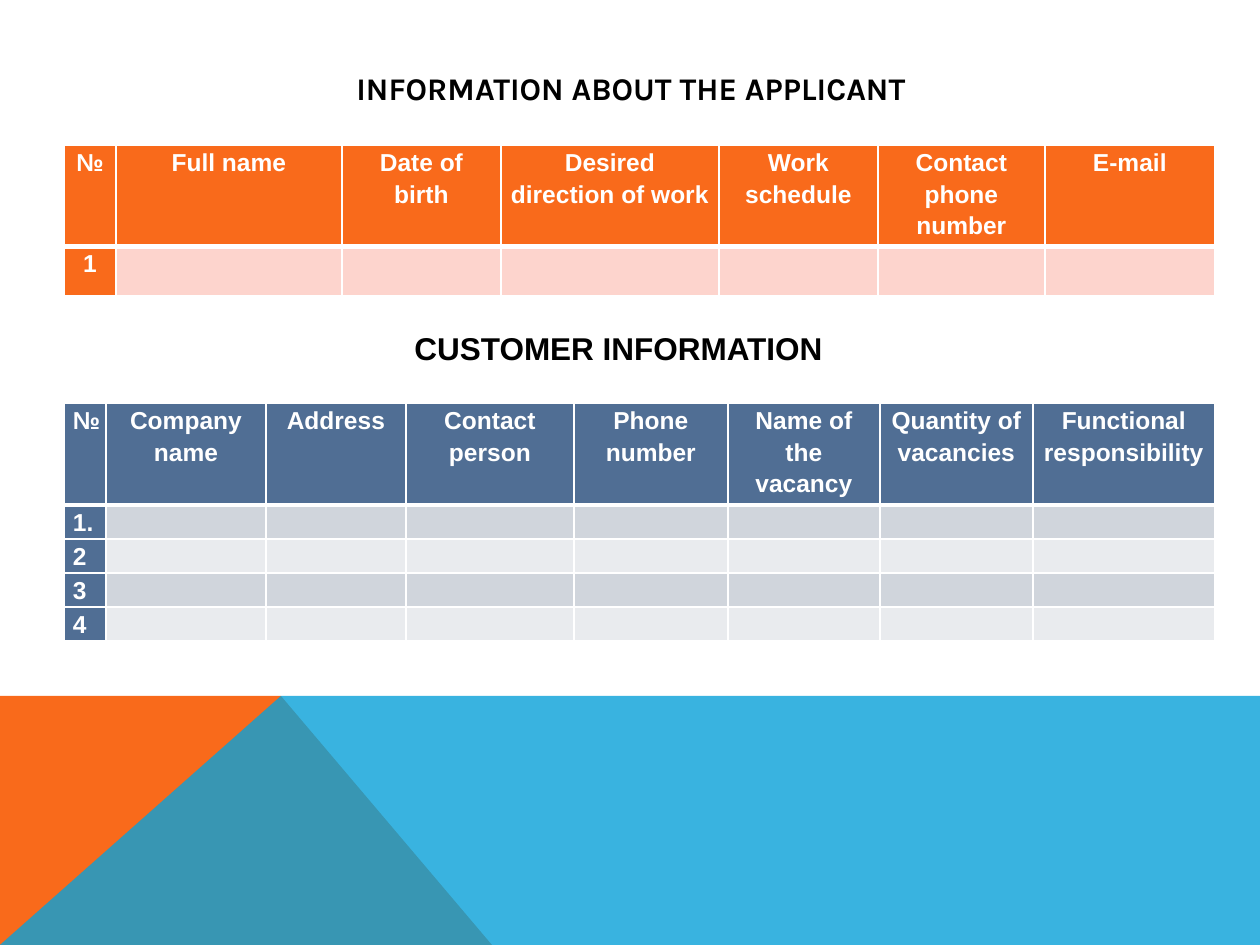
from lxml import etree
from pptx import Presentation, util as u
from pptx.dml.color import RGBColor
from pptx.enum import text as t
from pptx.oxml.ns import qn

PX = u.Inches(1) / 126
THEME = {
    "orange": "F96A1B", "sky": "08A1D9", "navy": "506E94",
    "blush": "FDD4CD", "grey": "D0D5DC", "pale": "E9EBEE",
    "ink": "000000", "white": "FFFFFF",
    "heading_size": 18, "table_size": 14,
}


def px(length):
    return u.Emu(round(length * PX))


def write(frame, content, size, color, font="Arial", align=t.PP_ALIGN.LEFT, spacing=None):
    paragraph = frame.paragraphs[0]
    paragraph.alignment = align
    paragraph.line_spacing = spacing
    if not content:
        # An empty cell still takes its row height from this size
        etree.SubElement(paragraph._p, qn("a:endParaRPr"), sz=str(size * 100))
        return
    run = paragraph.add_run()
    run.text = content
    run.font.name, run.font.size, run.font.bold = font, u.Pt(size), True
    run.font.color.rgb = RGBColor.from_string(THEME[color])


prs = Presentation()
prs.slide_width, prs.slide_height = px(1260), px(945)
slide = prs.slides.add_slide(prs.slide_layouts[5])

# Bottom decoration: an orange wedge under a translucent blue band
wedge = [(0, 945), (0, 696), (281, 696), (492, 945)]
band = [(0, 945), (281, 696), (1260, 696), (1260, 945)]
for points, color, alpha in [(wedge, "orange", 100), (band, "sky", 80)]:
    builder = slide.shapes.build_freeform(*points[0], scale=PX)
    builder.add_line_segments(points[1:], close=True)
    area = builder.convert_to_shape()
    area.shadow.inherit = False
    area.line.fill.background()
    area.fill.solid()
    area.fill.fore_color.rgb = RGBColor.from_string(THEME[color])
    rgb = area._element.spPr.find(qn("a:solidFill")).find(qn("a:srgbClr"))
    etree.SubElement(rgb, qn("a:alpha"), val=str(alpha * 1000))

# Headings
applicant_heading = slide.shapes.title
applicant_heading.left, applicant_heading.top = px(113), px(50)
applicant_heading.width, applicant_heading.height = px(1036), px(76)
applicant_heading.text_frame.auto_size = t.MSO_AUTO_SIZE.NONE
applicant_heading.text_frame.vertical_anchor = t.MSO_ANCHOR.MIDDLE
write(applicant_heading.text_frame, "INFORMATION ABOUT THE APPLICANT",
      THEME["heading_size"], "ink", font="Karla", align=t.PP_ALIGN.CENTER)

customer_heading = slide.shapes.add_textbox(px(402), px(323), px(437), px(50))
customer_heading.text_frame.word_wrap = False
customer_heading.text_frame.auto_size = t.MSO_AUTO_SIZE.SHAPE_TO_FIT_TEXT
write(customer_heading.text_frame, "CUSTOMER INFORMATION", THEME["heading_size"], "ink")

# Tables: a header row, then numbered rows that are otherwise empty
forms = [
    {"top": 145, "widths": [52, 226, 159, 218, 159, 167, 170], "heights": [99, 49],
     "header": ["№", "Full name", "Date of birth", "Desired direction of work",
                "Work schedule", "Contact phone number", "E-mail"],
     "numbers": ["1"], "number_align": t.PP_ALIGN.CENTER,
     "accent": "orange", "bands": ["blush"]},
    {"top": 403, "widths": [42, 160, 140, 168, 154, 152, 153, 182],
     "heights": [102, 34, 33, 34, 34],
     "header": ["№", "Company name", "Address", "Contact person", "Phone number",
                "Name of the vacancy", "Quantity of vacancies", "Functional responsibility"],
     "numbers": ["1.", "2", "3", "4"], "number_align": t.PP_ALIGN.LEFT,
     "accent": "navy", "bands": ["grey", "pale"]},
]
for form in forms:
    widths, heights = form["widths"], form["heights"]
    table = slide.shapes.add_table(len(heights), len(widths), px(64), px(form["top"]),
                                   px(sum(widths)), px(sum(heights))).table
    for column, width in zip(table.columns, widths):
        column.width = px(width)
    for row, height in zip(table.rows, heights):
        row.height = px(height)

    contents = [form["header"]]
    contents += [[number] + [""] * (len(widths) - 1) for number in form["numbers"]]
    for r, row_contents in enumerate(contents):
        for c, content in enumerate(row_contents):
            cell = table.cell(r, c)
            cell.margin_left = cell.margin_right = px(9)
            cell.margin_top = cell.margin_bottom = 0
            fill = form["accent"] if r == 0 or c == 0 else form["bands"][(r - 1) % len(form["bands"])]
            cell.fill.solid()
            cell.fill.fore_color.rgb = RGBColor.from_string(THEME[fill])
            write(cell.text_frame, content, THEME["table_size"], "white", spacing=1.15,
                  align=t.PP_ALIGN.CENTER if r == 0 else form["number_align"])

            # The rule between header and body is thicker than the grid
            rules = {"L": 1, "R": 1, "T": 3 if r == 1 else 1, "B": 3 if r == 0 else 1}
            for position, (side, points) in enumerate(rules.items()):
                border = etree.Element(qn(f"a:ln{side}"), w=str(u.Pt(points)))
                solid = etree.SubElement(border, qn("a:solidFill"))
                etree.SubElement(solid, qn("a:srgbClr"), val=THEME["white"])
                cell._tc.get_or_add_tcPr().insert(position, border)

prs.save("out.pptx")
